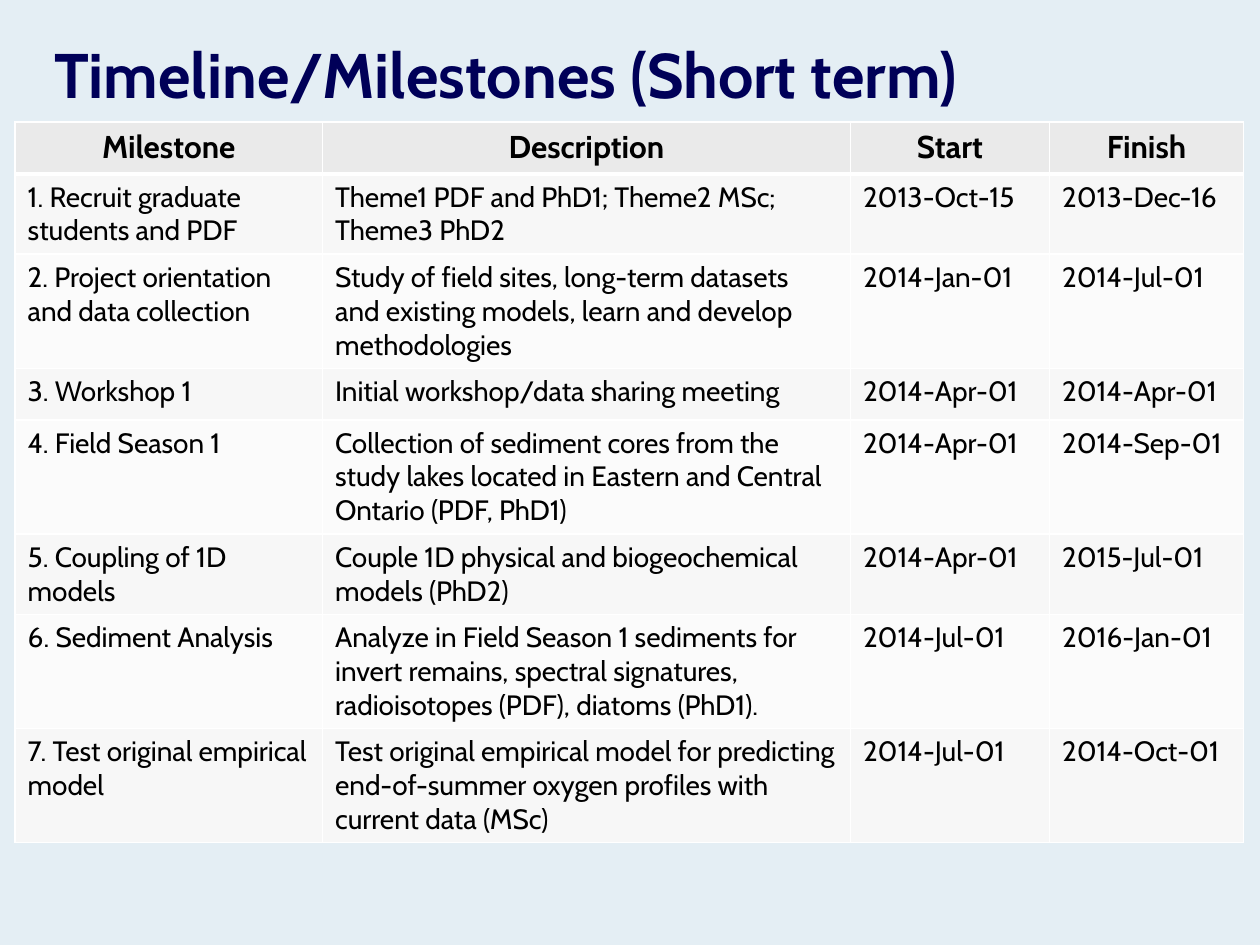
from dataclasses import dataclass

from lxml.etree import SubElement
from pptx import Presentation
from pptx.dml.color import RGBColor
from pptx.enum.text import MSO_ANCHOR as Anchor, MSO_AUTO_SIZE as AutoSize, PP_ALIGN as Align
from pptx.oxml.ns import qn
from pptx.util import Inches, Pt


@dataclass(frozen=True)
class Theme:
    """Colours and type sizes of the slide."""
    font: str = "Cabin"
    background: str = "E4EEF4"
    title: str = "000058"
    text: str = "000000"
    border: str = "FFFFFF"
    header_fill: str = "EAEAEA"
    band_fills: tuple = ("F7F7F7", "FBFBFB")
    title_size: int = 36
    header_size: int = 18
    body_size: int = 16
    thin: int = 1
    thick: int = 3


THEME = Theme()
COLUMN_WIDTHS = (2.44, 4.19, 1.58, 1.54)
ROW_HEIGHT = 0.41
HEADINGS = ("Milestone", "Description", "Start", "Finish")
MILESTONES = (
    ("1. Recruit graduate students and PDF",
     "Theme1 PDF and PhD1; Theme2 MSc; Theme3 PhD2",
     "2013-Oct-15", "2013-Dec-16"),
    ("2. Project orientation and data collection",
     "Study of field sites, long-term datasets and existing models, learn and develop methodologies",
     "2014-Jan-01", "2014-Jul-01"),
    ("3. Workshop 1", "Initial workshop/data sharing meeting",
     "2014-Apr-01", "2014-Apr-01"),
    ("4. Field Season 1",
     "Collection of sediment cores from the study lakes located in Eastern and Central Ontario (PDF, PhD1)",
     "2014-Apr-01", "2014-Sep-01"),
    ("5. Coupling of 1D models",
     "Couple 1D physical and biogeochemical models (PhD2)",
     "2014-Apr-01", "2015-Jul-01"),
    ("6. Sediment Analysis",
     "Analyze in Field Season 1 sediments for invert remains, spectral signatures, "
     "radioisotopes (PDF), diatoms (PhD1).",
     "2014-Jul-01", "2016-Jan-01"),
    ("7. Test original empirical model",
     "Test original empirical model for predicting end-of-summer oxygen profiles with current data (MSc)",
     "2014-Jul-01", "2014-Oct-01"),
)


def write_text(text_frame, text, size, color=THEME.text, bold=False, align=Align.LEFT):
    """Write one formatted paragraph into a text frame."""
    paragraph = text_frame.paragraphs[0]
    paragraph.alignment = align
    run = paragraph.add_run()
    run.text = text
    run.font.name = THEME.font
    run.font.size = Pt(size)
    run.font.bold = bold
    run.font.color.rgb = RGBColor.from_string(color)


def set_borders(cell, top, bottom):
    """Draw the four borders of a cell, with point widths for top and bottom."""
    properties = cell._tc.get_or_add_tcPr()
    widths = {"L": THEME.thin, "R": THEME.thin, "T": top, "B": bottom}
    for side, width in widths.items():
        line = SubElement(properties, qn(f"a:ln{side}"), w=str(Pt(width)))
        fill = SubElement(line, qn("a:solidFill"))
        SubElement(fill, qn("a:srgbClr"), val=THEME.border)


def set_background(slide):
    """Fill the slide background."""
    fill = slide.background.fill
    fill.solid()
    fill.fore_color.rgb = RGBColor.from_string(THEME.background)


def add_title(slide, text):
    """Place and fill the title placeholder."""
    title = slide.shapes.title
    title.left, title.top = Inches(0.33), Inches(0.25)
    title.width, title.height = Inches(9.42), Inches(0.67)
    frame = title.text_frame
    frame.auto_size = AutoSize.NONE
    frame.vertical_anchor = Anchor.MIDDLE
    write_text(frame, text, THEME.title_size, color=THEME.title, bold=True)


def add_milestone_table(slide, rows):
    """Add the table with a header row and banded body rows."""
    table = slide.shapes.add_table(
        len(rows), len(COLUMN_WIDTHS), Inches(0.12), Inches(0.97),
        Inches(sum(COLUMN_WIDTHS)), Inches(ROW_HEIGHT * len(rows))).table
    for column, width in zip(table.columns, COLUMN_WIDTHS):
        column.width = Inches(width)
    for index, values in enumerate(rows):
        header = index == 0
        table.rows[index].height = Inches(ROW_HEIGHT)
        fill = THEME.header_fill if header else THEME.band_fills[(index - 1) % 2]
        for cell, value in zip(table.rows[index].cells, values):
            set_borders(cell, top=THEME.thick if index == 1 else THEME.thin,
                        bottom=THEME.thick if header else THEME.thin)
            cell.fill.solid()
            cell.fill.fore_color.rgb = RGBColor.from_string(fill)
            write_text(cell.text_frame, value,
                       THEME.header_size if header else THEME.body_size,
                       bold=header, align=Align.CENTER if header else Align.LEFT)


def main():
    """Build and save the slide."""
    presentation = Presentation()
    presentation.slide_width, presentation.slide_height = Inches(10), Inches(7.5)
    slide = presentation.slides.add_slide(presentation.slide_layouts.get_by_name("Title Only"))
    set_background(slide)
    add_title(slide, "Timeline/Milestones (Short term)")
    add_milestone_table(slide, (HEADINGS, *MILESTONES))
    presentation.save("out.pptx")


if __name__ == "__main__":
    main()
